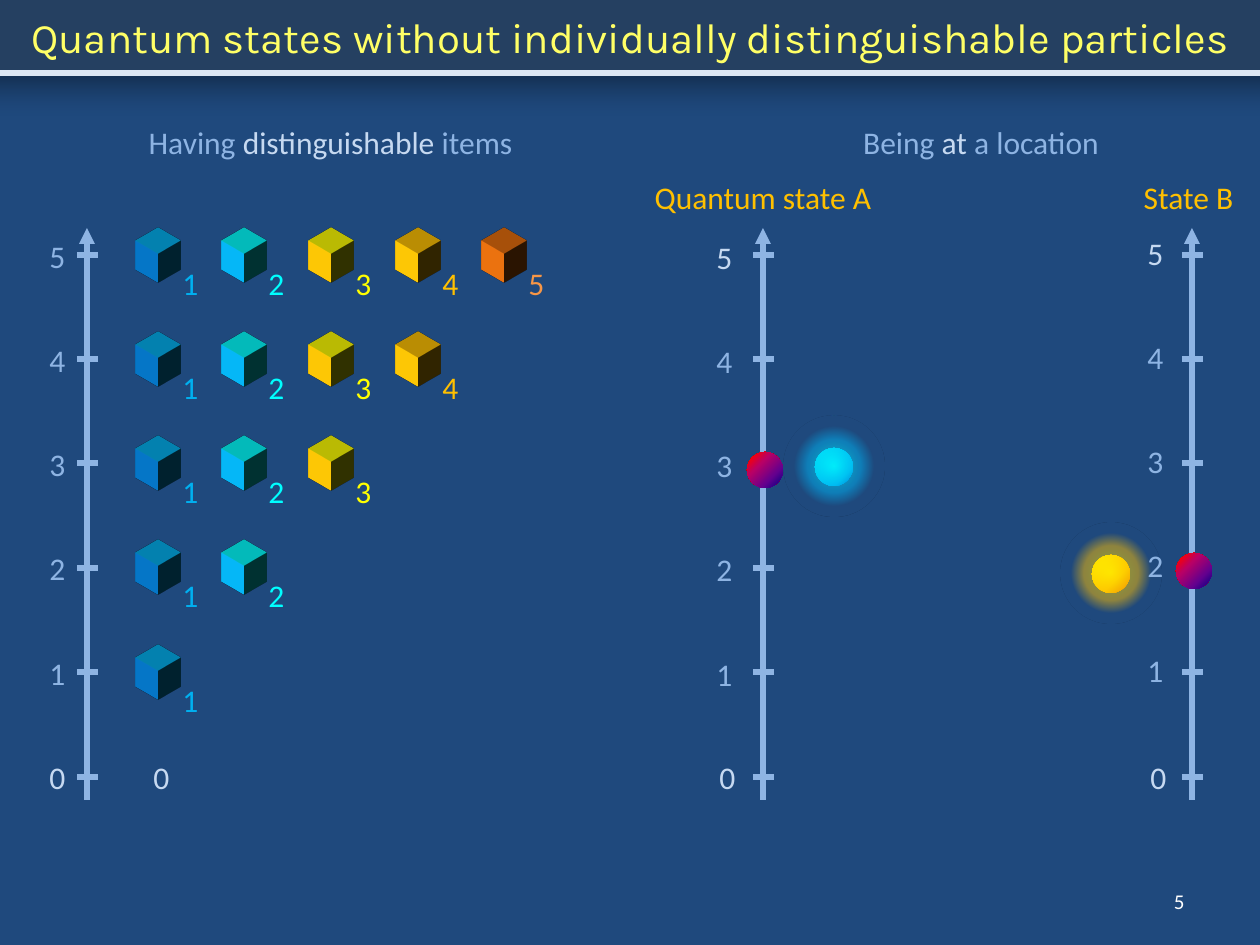
from lxml import etree
from pptx import Presentation
from pptx.dml.color import RGBColor
from pptx.enum.shapes import MSO_CONNECTOR, MSO_SHAPE
from pptx.enum.text import MSO_ANCHOR, PP_ALIGN
from pptx.oxml import parse_xml
from pptx.oxml.ns import qn
from pptx.util import Pt

NS = 'xmlns:a="http://schemas.openxmlformats.org/drawingml/2006/main"'
SCALE = 914400 / 126
LINE = MSO_CONNECTOR.STRAIGHT
OVAL, RECT = MSO_SHAPE.OVAL, MSO_SHAPE.RECTANGLE
TOP, MIDDLE = MSO_ANCHOR.TOP, MSO_ANCHOR.MIDDLE
LEFT, CENTER, RIGHT = PP_ALIGN.LEFT, PP_ALIGN.CENTER, PP_ALIGN.RIGHT

HEX = {
    "back": "1F497D", "band": "254061", "title": "FFFF66", "rule": "DCE6F2",
    "soft": "8EB4E3", "pale": "C6D9F1", "gold": "FFC000", "white": "FFFFFF",
}
CUBES = [
    ("0070C0", "00B0F0", "00B0F0"),
    ("00B0F0", "00FFFF", "00FFFF"),
    ("FFC000", "FFFF00", "FFFF00"),
    ("FFC000", "FFC000", "FFC000"),
    ("E46C0A", "E46C0A", "F79646"),
]
BALL = [(0, "000082", 100), (30, "66008F", 100), (65, "BA0066", 100),
        (90, "FF0000", 100), (100, "FF8200", 100)]
CYAN = ([(0, "00FFFF", 100), (75, "00B0F0", 100), (100, "005CBF", 100)],
        [(0, "00FFFF", 65), (38, "00B0F0", 50), (56, "1F497D", 50)])
AMBER = ([(0, "FFFF00", 100), (64, "FFC000", 100), (100, "E46C0A", 100)],
         [(0, "FFFF00", 50), (38, "FFC000", 50), (56, "1F497D", 50)])


def emu(*nums):
    """Turn px into EMU."""
    return [round(n * SCALE) for n in nums]


def text(slide, box, runs, host=None, size=18, font="Calibri",
         align=LEFT, anchor=TOP, wrap=True):
    """Write coloured runs in a new text box or in the host shape."""
    frame = (host or slide.shapes.add_textbox(*emu(*box))).text_frame
    frame.word_wrap = wrap
    frame.vertical_anchor = anchor
    para = frame.paragraphs[0]
    para.alignment = align
    for words, color in runs:
        run = para.add_run()
        run.text = words
        run.font.size, run.font.name = Pt(size), font
        run.font.color.rgb = RGBColor.from_string(color)


def digit(slide, x, y, num, color):
    """Write one number with its box corner at x, y."""
    text(slide, (x, y, 42, 50), [(str(num), color)], wrap=False)


def line(slide, start, end, color, arrow=False):
    """Draw a line of 3 points, with an arrow at its end if asked."""
    rule = slide.shapes.add_connector(LINE, *emu(*start, *end))
    rule.line.width = Pt(3)
    rule.line.color.rgb = RGBColor.from_string(color)
    if arrow:
        etree.SubElement(rule.line._get_or_add_ln(), qn("a:tailEnd"), type="triangle")
    etree.SubElement(rule._element.spPr, qn("a:effectLst"))


def plain(shape, color):
    """Give a shape a flat fill with no line and no shadow."""
    shape.shadow.inherit = False
    shape.fill.solid()
    shape.fill.fore_color.rgb = RGBColor.from_string(color)
    shape.line.fill.background()


def disc(slide, x, y, size, stops, focus):
    """Draw a disc with a round gradient spreading from focus."""
    shape = slide.shapes.add_shape(OVAL, *emu(x, y, size, size))
    plain(shape, stops[0][1])
    marks = "".join(
        f'<a:gs pos="{pos * 1000}"><a:srgbClr val="{color}">'
        f'<a:alpha val="{alpha * 1000}"/></a:srgbClr></a:gs>'
        for pos, color, alpha in stops)
    near, far = focus * 1000, (100 - focus) * 1000
    grad = parse_xml(
        f'<a:gradFill {NS} rotWithShape="1"><a:gsLst>{marks}</a:gsLst>'
        f'<a:path path="circle"><a:fillToRect l="{near}" t="{near}" '
        f'r="{far}" b="{far}"/></a:path></a:gradFill>')
    props = shape._element.spPr
    props.replace(props.find(qn("a:solidFill")), grad)


def glow(slide, x, y, stops):
    """Draw a small ball under a wide halo."""
    disc(slide, x + 31, y + 32, 38, stops[0], 0)
    disc(slide, x, y, 101, stops[1], 50)


def axis(slide, x, gap, top, zero, last):
    """Draw an upright axis at x with ticks and labels from 0 to 5."""
    line(slide, (x, 800), (x, 228), HEX["soft"], arrow=True)
    for num in range(6):
        y = 255 + 522 * (5 - num) // 5
        line(slide, (x - 10, y), (x + 11, y), HEX["soft"])
        if num:
            color = last if num == 5 else HEX["soft"]
            digit(slide, x - gap, top + 417 * (5 - num) // 4, num, color)
    digit(slide, x - zero, 752, 0, HEX["pale"])


def cube(slide, x, y, num):
    """Draw an extruded square as a cube with its number beside it."""
    front, side, ink = CUBES[num - 1]
    shape = slide.shapes.add_shape(RECT, *emu(x, y, 32, 35))
    plain(shape, front)
    depth = emu(32)[0]
    for part in (
            f'<a:scene3d {NS}><a:camera prst="isometricLeftDown"/>'
            '<a:lightRig rig="threePt" dir="t"/></a:scene3d>',
            f'<a:sp3d {NS} extrusionH="{depth}"><a:extrusionClr>'
            f'<a:srgbClr val="{side}"/></a:extrusionClr></a:sp3d>'):
        shape._element.spPr.append(parse_xml(part))
    digit(slide, x + 39, y + 14, num, ink)


def stacks(slide, x, y):
    """Place rows of five to one cubes."""
    for row in range(5):
        for col in range(5 - row):
            cube(slide, x + round(86.5 * col), y + 417 * row // 4, col + 1)
    digit(slide, x + 10, y + 508, 0, HEX["pale"])


def states(slide):
    """Place both quantum states with their balls and glows."""
    glow(slide, 1061, 523, AMBER)
    glow(slide, 784, 416, CYAN)
    axis(slide, 1192, 57, 228, 54, HEX["pale"])
    axis(slide, 763, 59, 232, 56, HEX["pale"])
    for x, y in ((1176, 553), (747, 452)):
        disc(slide, x, y, 36, BALL, 100)
    for x, wide, name in ((636, 254, "Quantum state A"), (1069, 239, "State B")):
        text(slide, (x, 172, wide, 50), [(name, HEX["gold"])], align=CENTER)


def header(slide):
    """Place the title band and the frame under it."""
    box = (0, 0, 1260, 73)
    band = slide.shapes.add_shape(RECT, *emu(*box))
    plain(band, HEX["band"])
    band._element.spPr.find(qn("a:effectLst")).append(parse_xml(
        f'<a:outerShdw {NS} blurRad="254000" dist="63500" dir="5400000" '
        'sx="108000" algn="t" rotWithShape="0"><a:srgbClr val="000000">'
        '<a:alpha val="50000"/></a:srgbClr></a:outerShdw>'))
    title = "Quantum states without individually distinguishable particles"
    text(slide, box, [(title, HEX["title"])], host=band, size=24, font="Karla",
         align=CENTER, anchor=MIDDLE, wrap=False)
    frame = slide.shapes.add_shape(RECT, *emu(-21, 73, 1302, 903))
    frame.shadow.inherit = False
    frame.fill.background()
    frame.line.width = Pt(3)
    frame.line.color.rgb = RGBColor.from_string(HEX["rule"])


def main():
    """Build the slide and save it."""
    deck = Presentation()
    deck.slide_width, deck.slide_height = emu(1260, 945)
    slide = deck.slides.add_slide(deck.slide_layouts[6])
    slide.background.fill.solid()
    slide.background.fill.fore_color.rgb = RGBColor.from_string(HEX["back"])
    header(slide)
    soft, pale = HEX["soft"], HEX["pale"]
    text(slide, (98, 117, 465, 50), [
        ("Having ", soft), ("distinguishable ", pale), ("items", soft)], align=CENTER)
    text(slide, (661, 117, 640, 50), [
        ("Being ", soft), ("at ", pale), ("a location", soft)], align=CENTER)
    axis(slide, 87, 50, 231, 50, soft)
    stacks(slide, 131, 244)
    states(slide)
    text(slide, (903, 876, 294, 50), [("5", HEX["white"])], size=12,
         align=RIGHT, anchor=MIDDLE)
    deck.save("out.pptx")


if __name__ == "__main__":
    main()
